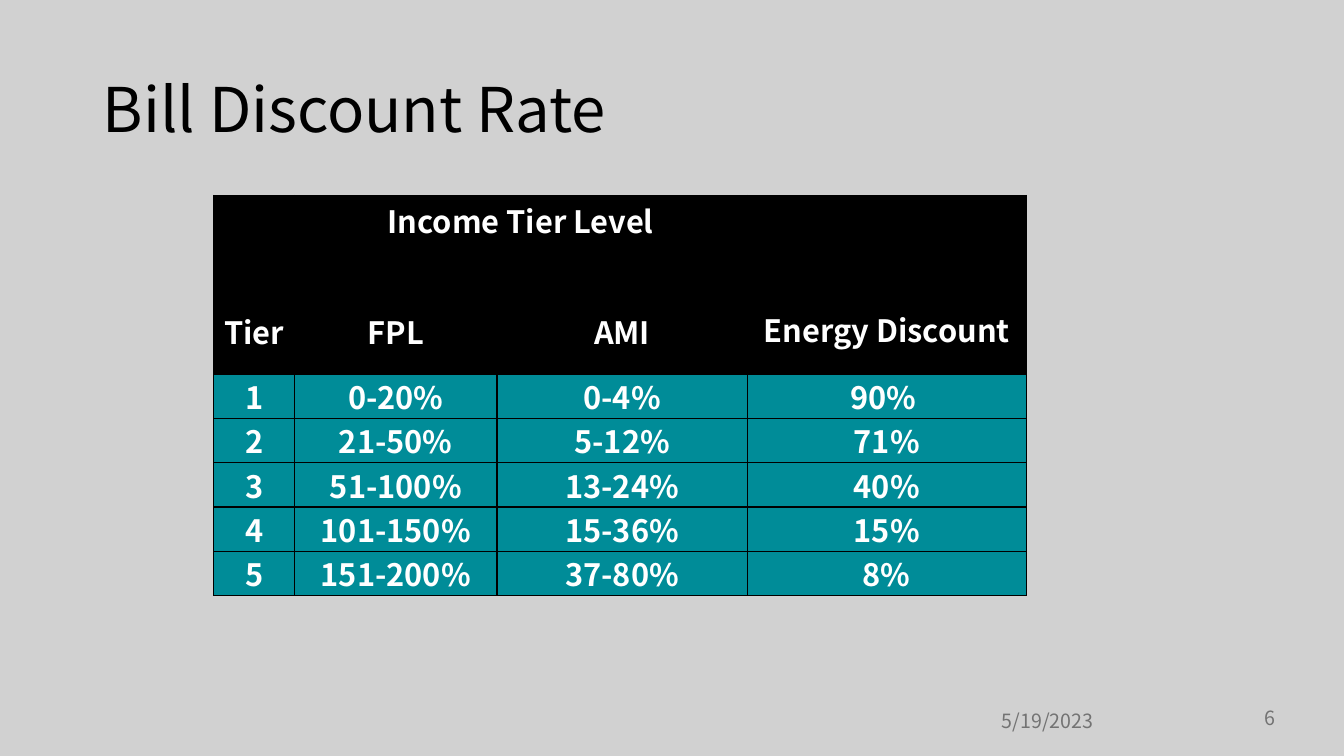
from dataclasses import dataclass

from lxml.etree import SubElement
from pptx import Presentation
from pptx.dml.color import RGBColor
from pptx.enum.text import MSO_ANCHOR, PP_ALIGN
from pptx.oxml.ns import qn
from pptx.util import Inches, Pt


@dataclass(frozen=True)
class Theme:
    font: str = "Noto Sans CJK JP"
    background: str = "D1D1D1"
    ink: str = "000000"
    muted: str = "737373"
    header: str = "000000"
    body: str = "008C98"
    on_fill: str = "FFFFFF"
    title_size: int = 44
    table_size: int = 22
    footer_size: int = 14


THEME = Theme()
SLIDE_WIDTH, SLIDE_HEIGHT = Inches(13.33), Inches(7.5)
TEXT_LINE = 0.44  # inches taken by one line of table text

TABLE_LEFT, TABLE_TOP = Inches(2.12), Inches(1.94)
COLUMN_WIDTHS = [0.8, 2.01, 2.48, 2.77]
HEADER_HEIGHTS = [0.48, 1.29]
TIERS = [
    ("1", "0-20%", "0-4%", "90% "),
    ("2", "21-50%", "5-12%", "71%"),
    ("3", "51-100%", "13-24%", "40%"),
    ("4", "101-150%", "15-36%", "15%"),
    ("5", "151-200%", "37-80%", "8%"),
]


def style(paragraph, size, color, bold=False, align=PP_ALIGN.LEFT):
    paragraph.alignment = align
    paragraph.font.name = THEME.font
    paragraph.font.size = Pt(size)
    paragraph.font.bold = bold
    paragraph.font.color.rgb = RGBColor.from_string(color)


def place(shape, left, top, width, height):
    """Position a shape by shares of the slide's size."""
    shape.left, shape.width = int(left * SLIDE_WIDTH), int(width * SLIDE_WIDTH)
    shape.top, shape.height = int(top * SLIDE_HEIGHT), int(height * SLIDE_HEIGHT)


def add_title(slide, text):
    title = slide.shapes.title
    place(title, 0.069, 0.053, 0.863, 0.193)
    title.text_frame.text = text
    title.text_frame.vertical_anchor = MSO_ANCHOR.MIDDLE
    heading = title.text_frame.paragraphs[0]
    heading.line_spacing = 0.9
    style(heading, THEME.title_size, THEME.ink)


def add_footer(slide, text, left, width, align, anchor):
    footer = slide.shapes.add_textbox(0, 0, 0, 0)
    place(footer, left, 0.927, width, 0.053)
    footer.text_frame.word_wrap = True
    footer.text_frame.vertical_anchor = anchor
    footer.text_frame.text = text
    style(footer.text_frame.paragraphs[0], THEME.footer_size, THEME.muted, align=align)


def add_borders(cell):
    properties = cell._tc.get_or_add_tcPr()
    for side in ("a:lnL", "a:lnR", "a:lnT", "a:lnB"):
        line = SubElement(properties, qn(side), w=str(Pt(1)))
        SubElement(SubElement(line, qn("a:solidFill")), qn("a:srgbClr"), val=THEME.ink)


def fill_cell(cell, text, fill, anchor, lines_above=0):
    cell.margin_left = cell.margin_right = Inches(0.07)
    cell.margin_top, cell.margin_bottom = Inches(lines_above * TEXT_LINE), 0
    cell.vertical_anchor = anchor
    add_borders(cell)
    cell.fill.solid()
    cell.fill.fore_color.rgb = RGBColor.from_string(fill)
    cell.text = text
    style(cell.text_frame.paragraphs[0], THEME.table_size, THEME.on_fill, True, PP_ALIGN.CENTER)


def add_discount_table(slide):
    heights = HEADER_HEIGHTS + [TEXT_LINE] * len(TIERS)
    table = slide.shapes.add_table(
        len(heights), len(COLUMN_WIDTHS), TABLE_LEFT, TABLE_TOP,
        Inches(sum(COLUMN_WIDTHS)), Inches(sum(heights)),
    ).table
    for column, width in zip(table.columns, COLUMN_WIDTHS):
        column.width = Inches(width)
    for row, height in zip(table.rows, heights):
        row.height = Inches(height)

    # Two header rows, with the discount heading spanning both
    table.cell(0, 1).merge(table.cell(0, 2))
    table.cell(0, 3).merge(table.cell(1, 3))
    headers = [
        [("", 0), ("Income Tier Level", 0), ("", 0), ("Energy Discount", 2)],
        [("Tier", 1), ("FPL", 1), ("AMI", 1), ("", 0)],
    ]
    for r, headings in enumerate(headers):
        for c, (text, lines_above) in enumerate(headings):
            fill_cell(table.cell(r, c), text, THEME.header, MSO_ANCHOR.MIDDLE, lines_above)

    # One row per income tier
    for r, tier in enumerate(TIERS, len(headers)):
        for c, text in enumerate(tier):
            fill_cell(table.cell(r, c), text, THEME.body, MSO_ANCHOR.BOTTOM)


def main():
    deck = Presentation()
    deck.slide_width, deck.slide_height = SLIDE_WIDTH, SLIDE_HEIGHT
    slide = deck.slides.add_slide(deck.slide_layouts.get_by_name("Title Only"))
    slide.background.fill.solid()
    slide.background.fill.fore_color.rgb = RGBColor.from_string(THEME.background)

    add_title(slide, "Bill Discount Rate")
    add_footer(slide, "6", 0.885, 0.071, PP_ALIGN.RIGHT, MSO_ANCHOR.TOP)
    add_footer(slide, "5/19/2023", 0.684, 0.191, PP_ALIGN.CENTER, MSO_ANCHOR.MIDDLE)
    add_discount_table(slide)
    deck.save("out.pptx")


if __name__ == "__main__":
    main()
